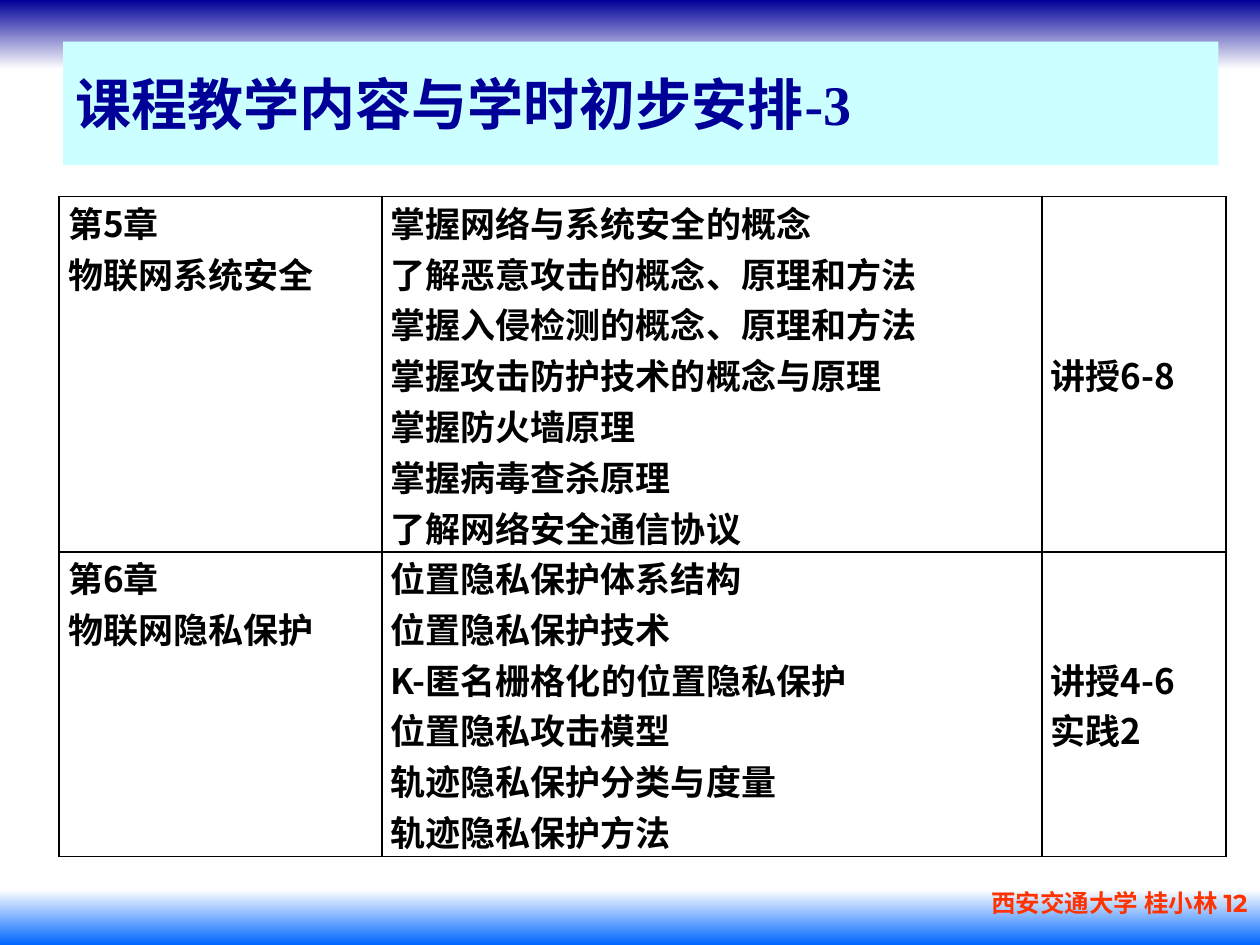
from lxml.etree import SubElement
from pptx import Presentation
from pptx.dml.color import RGBColor
from pptx.enum.shapes import MSO_SHAPE
from pptx.enum.text import MSO_ANCHOR, MSO_AUTO_SIZE, PP_ALIGN
from pptx.oxml.ns import qn
from pptx.util import Inches, Pt

NAVY = RGBColor(0x00, 0x00, 0x99)
BLUE = RGBColor(0x00, 0x66, 0xFF)
CYAN = RGBColor(0xCC, 0xFF, 0xFF)
ORANGE = RGBColor(0xFF, 0x33, 0x00)
BLACK = RGBColor(0x00, 0x00, 0x00)
WHITE = RGBColor(0xFF, 0xFF, 0xFF)

CJK_FONT = "Noto Sans CJK SC"
HANGING = Inches(0.38)
COLUMN_WIDTHS = [2.56, 5.24, 1.46]
ROW_HEIGHTS = [2.82, 2.42]
CHAPTERS = [
    (
        ["第5章", "物联网系统安全"],
        [
            "掌握网络与系统安全的概念",
            "了解恶意攻击的概念、原理和方法",
            "掌握入侵检测的概念、原理和方法",
            "掌握攻击防护技术的概念与原理",
            "掌握防火墙原理",
            "掌握病毒查杀原理",
            "了解网络安全通信协议",
        ],
        ["讲授6-8"],
    ),
    (
        ["第6章", "物联网隐私保护"],
        [
            "位置隐私保护体系结构",
            "位置隐私保护技术",
            "K-匿名栅格化的位置隐私保护",
            "位置隐私攻击模型",
            "轨迹隐私保护分类与度量",
            "轨迹隐私保护方法",
        ],
        ["讲授4-6", "实践2"],
    ),
]


def format_paragraph(paragraph, size, font_name, color, alignment):
    paragraph.alignment = alignment
    font = paragraph.font
    font.size = Pt(size)
    font.bold = True
    font.color.rgb = color
    font.name = font_name
    defaults = paragraph._p.pPr.find(qn("a:defRPr"))
    SubElement(defaults, qn("a:ea"), typeface=CJK_FONT)


def add_gradient_bar(slide, left, top, width, height, colors):
    bar = slide.shapes.add_shape(MSO_SHAPE.RECTANGLE, left, top, width, height)
    bar.shadow.inherit = False
    bar.line.fill.background()
    bar.fill.gradient()
    bar.fill.gradient_angle = 270
    for stop, color in zip(bar.fill.gradient_stops, colors):
        stop.color.rgb = color


def place_title(slide, left, top, width, height):
    title = slide.shapes.title
    slide.shapes._spTree.append(title._element)
    title.left, title.top, title.width, title.height = left, top, width, height
    title.fill.solid()
    title.fill.fore_color.rgb = CYAN
    frame = title.text_frame
    frame.text = "课程教学内容与学时初步安排-3"
    frame.auto_size = MSO_AUTO_SIZE.NONE
    frame.vertical_anchor = MSO_ANCHOR.MIDDLE
    format_paragraph(frame.paragraphs[0], 32, "Times New Roman", NAVY, PP_ALIGN.LEFT)


def add_footer(slide, left, top, width, height):
    frame = slide.shapes.add_textbox(left, top, width, height).text_frame
    frame.word_wrap = True
    frame.text = "西安交通大学 桂小林 12"
    format_paragraph(frame.paragraphs[0], 14, "Montserrat", ORANGE, PP_ALIGN.RIGHT)


def add_borders(cell):
    properties = cell._tc.get_or_add_tcPr()
    for position, side in enumerate(("a:lnL", "a:lnR", "a:lnT", "a:lnB")):
        line = properties.makeelement(qn(side), {"w": str(Pt(1))})
        fill = SubElement(line, qn("a:solidFill"))
        SubElement(fill, qn("a:srgbClr"), val=str(BLACK))
        properties.insert(position, line)


def fill_cell(cell, lines, anchor, alignment, hanging):
    cell.fill.background()
    cell.margin_left = cell.margin_right = Inches(0.07)
    cell.margin_top = cell.margin_bottom = 0
    cell.vertical_anchor = anchor
    add_borders(cell)
    cell.text_frame.text = "\n".join(lines)
    for paragraph in cell.text_frame.paragraphs:
        format_paragraph(paragraph, 20, CJK_FONT, BLACK, alignment)
        if hanging:
            paragraph._p.pPr.set("marL", str(hanging))
            paragraph._p.pPr.set("indent", str(-hanging))


def add_schedule(slide, left, top, width, height):
    table = slide.shapes.add_table(
        len(CHAPTERS), len(COLUMN_WIDTHS), left, top, width, height
    ).table
    table.first_row = False
    table.horz_banding = False
    for column, column_width in zip(table.columns, COLUMN_WIDTHS):
        column.width = Inches(column_width)
    styles = [
        (MSO_ANCHOR.TOP, PP_ALIGN.JUSTIFY, 0),
        (MSO_ANCHOR.TOP, PP_ALIGN.LEFT, HANGING),
        (MSO_ANCHOR.MIDDLE, PP_ALIGN.JUSTIFY, 0),
    ]
    for row, row_height, chapter in zip(table.rows, ROW_HEIGHTS, CHAPTERS):
        row.height = Inches(row_height)
        for cell, lines, style in zip(row.cells, chapter, styles):
            fill_cell(cell, lines, *style)


def main():
    presentation = Presentation()
    presentation.slide_width = Inches(10)
    presentation.slide_height = Inches(7.5)
    slide = presentation.slides.add_slide(presentation.slide_layouts[5])
    add_gradient_bar(slide, 0, 0, Inches(10), Inches(0.55), (NAVY, WHITE))
    add_gradient_bar(slide, 0, Inches(7.06), Inches(10), Inches(0.44), (WHITE, BLUE))
    place_title(slide, Inches(0.5), Inches(0.33), Inches(9.17), Inches(0.98))
    add_footer(slide, Inches(7.05), Inches(7), Inches(2.95), Inches(0.5))
    add_schedule(
        slide,
        Inches(0.47),
        Inches(1.56),
        Inches(sum(COLUMN_WIDTHS)),
        Inches(sum(ROW_HEIGHTS)),
    )
    presentation.save("out.pptx")


if __name__ == "__main__":
    main()
